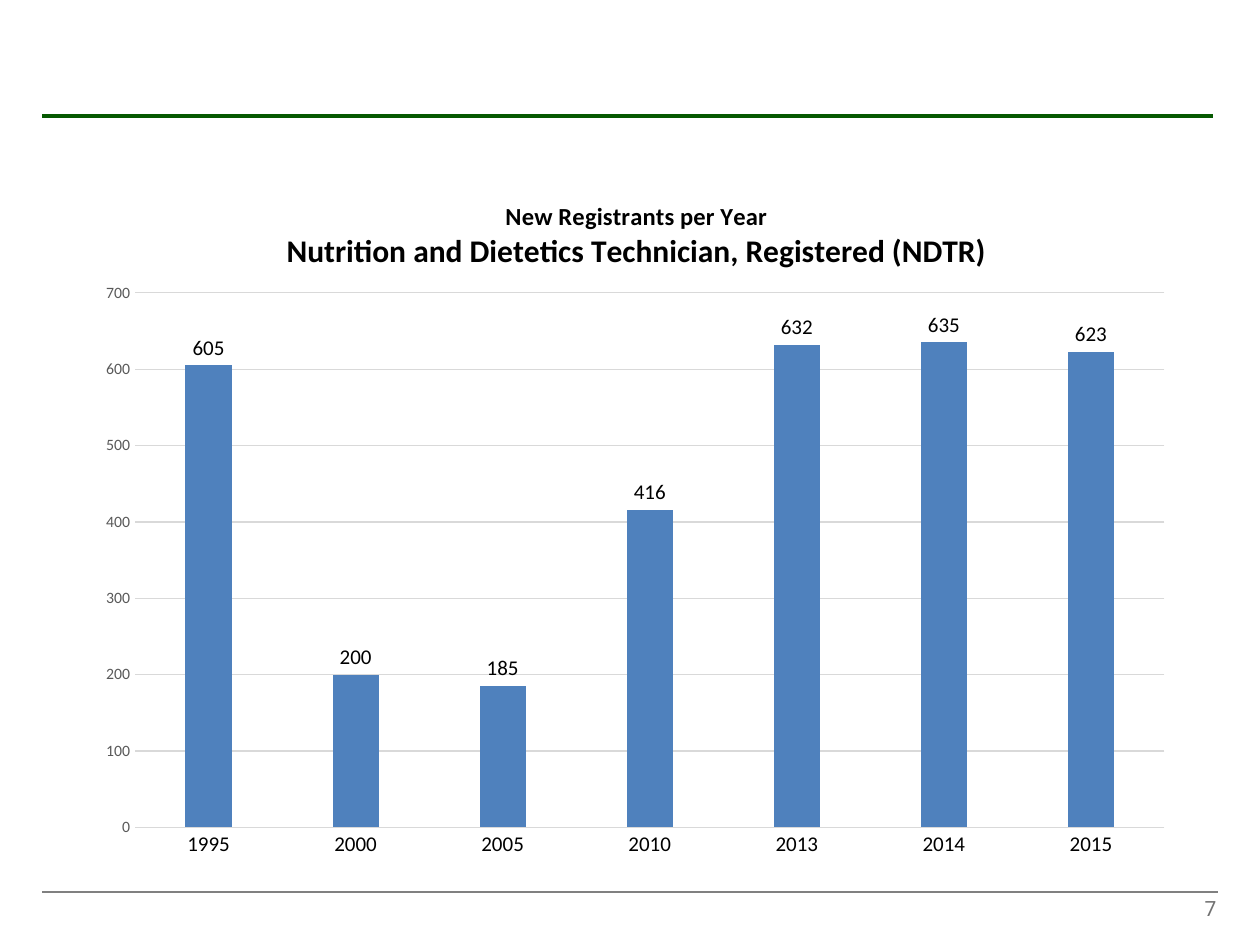
from lxml.etree import SubElement
from pptx import Presentation
from pptx.chart.data import CategoryChartData
from pptx.dml.color import RGBColor
from pptx.enum.chart import XL_CHART_TYPE, XL_LABEL_POSITION, XL_TICK_MARK
from pptx.enum.shapes import MSO_CONNECTOR
from pptx.enum.text import MSO_ANCHOR, PP_ALIGN
from pptx.oxml import parse_xml
from pptx.oxml.ns import nsdecls, qn
from pptx.util import Cm, Pt

REGISTRANTS = {"1995": 605, "2000": 200, "2005": 185, "2010": 416,
               "2013": 632, "2014": 635, "2015": 623}
TITLE_LINES = [("New Registrants per Year", 14),
               ("Nutrition and Dietetics Technician, Registered (NDTR)", 18)]


def color(hex_string):
    return RGBColor.from_string(hex_string)


def style_font(font, size, hex_string, name="Calibri", bold=False):
    font.name = name
    font.size = Pt(size)
    font.bold = bold
    font.color.rgb = color(hex_string)


def style_line(line, hex_string, width):
    line.color.rgb = color(hex_string)
    line.width = Pt(width)


def add_rule(slide, left, right, top, hex_string, width):
    """Add a horizontal line across the slide."""
    rule = slide.shapes.add_connector(
        MSO_CONNECTOR.STRAIGHT, Cm(left), Cm(top), Cm(right), Cm(top))
    style_line(rule.line, hex_string, width)
    SubElement(rule._element.spPr, qn("a:effectLst"))


def add_slide_number(slide, number):
    box = slide.shapes.add_textbox(Cm(18.85), Cm(17.98), Cm(5.92), Cm(0.64))
    frame = box.text_frame
    frame.word_wrap = True
    frame.vertical_anchor = MSO_ANCHOR.MIDDLE
    paragraph = frame.paragraphs[0]
    paragraph.text = number
    paragraph.alignment = PP_ALIGN.RIGHT
    style_font(paragraph.font, 12, "717171", "Roboto")


def set_layout(element, index, **fractions):
    """Place a chart part by fractions of the chart's size."""
    for layout in element.findall(qn("c:layout")):
        element.remove(layout)
    target = '<c:layoutTarget val="inner"/>' if "w" in fractions else ""
    modes = "".join(f'<c:{key}Mode val="edge"/>' for key in "xy")
    values = "".join(f'<c:{key} val="{value}"/>' for key, value in fractions.items())
    element.insert(index, parse_xml(
        f'<c:layout {nsdecls("c")}><c:manualLayout>{target}{modes}{values}'
        '</c:manualLayout></c:layout>'))


def add_title(chart):
    title = chart.chart_title
    frame = title.text_frame
    for index, (text, size) in enumerate(TITLE_LINES):
        paragraph = frame.add_paragraph() if index else frame.paragraphs[0]
        paragraph.alignment = PP_ALIGN.CENTER
        run = paragraph.add_run()
        run.text = text
        style_font(run.font, size, "000000", bold=True)
    title.include_in_layout = False
    set_layout(title._element, 1, x=0.18, y=0.04)


def style_axes(chart):
    category_axis, value_axis = chart.category_axis, chart.value_axis
    for axis, size, hex_string in ((category_axis, 12, "000000"),
                                   (value_axis, 9, "595959")):
        axis.major_tick_mark = axis.minor_tick_mark = XL_TICK_MARK.NONE
        style_font(axis.tick_labels.font, size, hex_string)
    style_line(category_axis.format.line, "D9D9D9", 0.75)
    value_axis.format.line.fill.background()
    style_line(value_axis.major_gridlines.format.line, "D9D9D9", 0.75)
    value_axis.minimum_scale, value_axis.maximum_scale = 0, 700
    value_axis.major_unit = 100


def style_columns(plot):
    plot.vary_by_categories = False
    plot.gap_width = 219
    plot.overlap = -27
    series = plot.series[0]
    series.format.fill.solid()
    series.format.fill.fore_color.rgb = color("4F81BD")
    labels = series.data_labels
    labels.show_value = True
    labels.position = XL_LABEL_POSITION.OUTSIDE_END
    style_font(labels.font, 12, "000000")


def add_registrants_chart(slide):
    data = CategoryChartData()
    data.categories = REGISTRANTS.keys()
    data.add_series("Series 1", REGISTRANTS.values())
    chart = slide.shapes.add_chart(
        XL_CHART_TYPE.COLUMN_CLUSTERED, Cm(1.7), Cm(3.38), Cm(22.22), Cm(14.18), data).chart
    style_font(chart.font, 10, "000000")
    chart.has_legend = False
    add_title(chart)
    style_axes(chart)
    style_columns(chart.plots[0])
    plot_area = chart._chartSpace.chart.plotArea
    set_layout(plot_area, 0, x=0.046, y=0.178, w=0.934, h=0.76)


def main():
    presentation = Presentation()
    presentation.slide_width, presentation.slide_height = Cm(25.4), Cm(19.05)
    slide = presentation.slides.add_slide(presentation.slide_layouts[6])
    add_rule(slide, 0.85, 24.55, 17.98, "808080", 1)
    add_rule(slide, 0.85, 24.45, 2.33, "065901", 2.25)
    add_slide_number(slide, "7")
    add_registrants_chart(slide)
    presentation.save("out.pptx")


if __name__ == "__main__":
    main()
